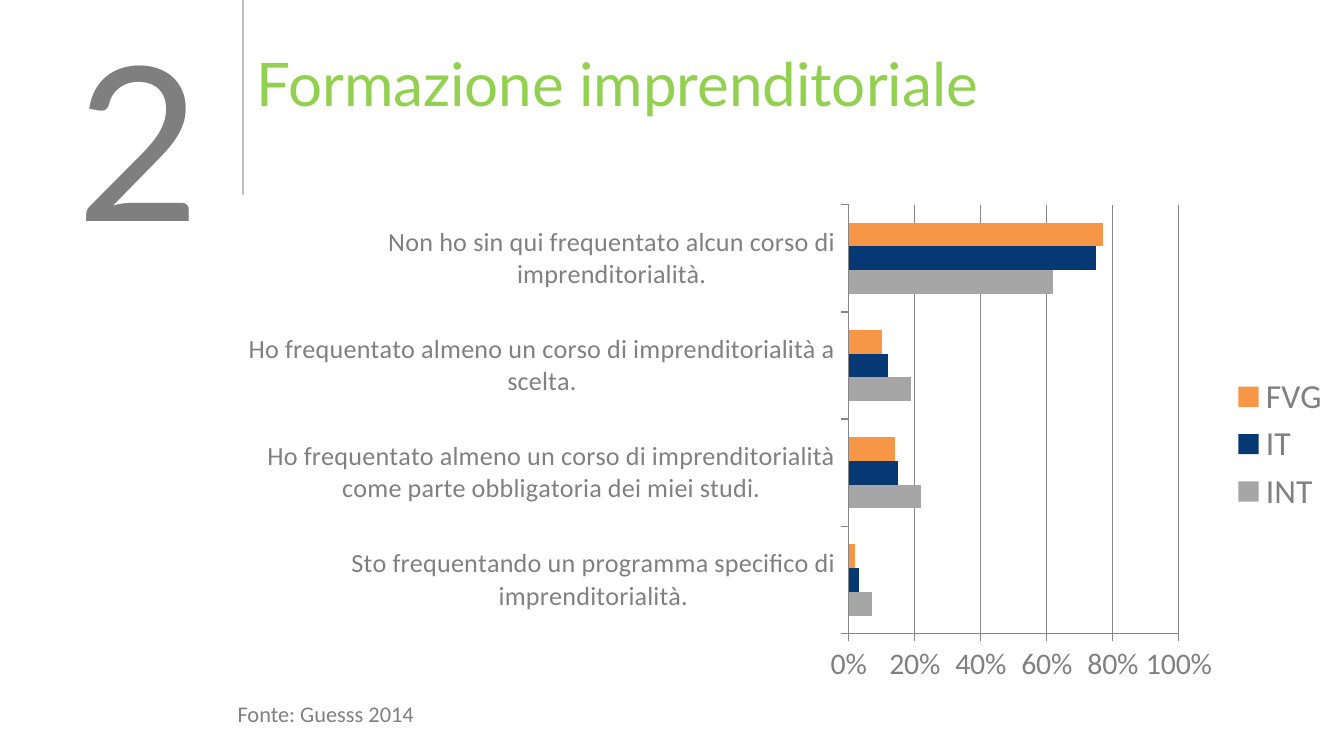
from dataclasses import dataclass

from lxml import etree
from pptx import Presentation
from pptx.chart.data import CategoryChartData
from pptx.dml.color import RGBColor
from pptx.enum import chart as charts, shapes, text
from pptx.oxml import parse_xml
from pptx.oxml.ns import nsdecls, qn
from pptx.util import Cm, Pt

COLORS = {
    "title": "92D050",
    "number": "7F7F7F",
    "text": "808080",
    "rule": "BFBFBF",
    "axis": "868686",
    "int": "A6A6A6",
    "it": "063873",
    "fvg": "F79646",
}


@dataclass(frozen=True)
class Box:
    left: float
    top: float
    width: float
    height: float

    def lengths(self) -> list:
        return [Cm(v) for v in (self.left, self.top, self.width, self.height)]


@dataclass(frozen=True)
class Series:
    name: str
    values: tuple
    color: str


CATEGORIES = [
    "Sto frequentando un programma specifico di imprenditorialità.",
    "Ho frequentato almeno un corso di imprenditorialità come parte obbligatoria dei miei studi.",
    "Ho frequentato almeno un corso di imprenditorialità a scelta.",
    "Non ho sin qui frequentato alcun corso di imprenditorialità.",
]
SERIES = [
    Series("INT", (0.07, 0.22, 0.19, 0.62), "int"),
    Series("IT", (0.03, 0.15, 0.12, 0.75), "it"),
    Series("FVG", (0.02, 0.14, 0.1, 0.77), "fvg"),
]
PLOT_LAYOUT = {"x": 0.55, "y": 0.02, "w": 0.3, "h": 0.86}


def rgb(name: str) -> RGBColor:
    return RGBColor.from_string(COLORS[name])


def style_font(font, size: float, color: str, name: str) -> None:
    font.size = Pt(size)
    font.name = name
    font.bold = False
    font.color.rgb = rgb(color)


def write_text(sp, content: str, *, size: float, color: str, font: str = "Lato",
               align=text.PP_ALIGN.LEFT, wrap: bool = True) -> None:
    tf = sp.text_frame
    tf.word_wrap = wrap
    tf.auto_size = text.MSO_AUTO_SIZE.NONE
    tf.vertical_anchor = text.MSO_ANCHOR.TOP
    p = tf.paragraphs[0]
    p.alignment = align
    r = p.add_run()
    r.text = content
    style_font(r.font, size, color, font)


def add_rule(slide, x: float, bottom: float) -> None:
    line = slide.shapes.add_connector(
        shapes.MSO_CONNECTOR.STRAIGHT, Cm(x), Cm(0), Cm(x), Cm(bottom))
    line.line.color.rgb = rgb("rule")
    line.line.width = Pt(1)
    etree.SubElement(line._element.spPr, qn("a:effectLst"))


def fix_plot_area(chart) -> None:
    """Pin the inner plot area so the long category labels get their room."""
    plot_area = chart._chartSpace.chart.plotArea
    for old in plot_area.findall(qn("c:layout")):
        plot_area.remove(old)
    sizes = "".join(f'<c:{k} val="{v}"/>' for k, v in PLOT_LAYOUT.items())
    plot_area.insert(0, parse_xml(
        f'<c:layout {nsdecls("c")}><c:manualLayout><c:layoutTarget val="inner"/>'
        f'<c:xMode val="edge"/><c:yMode val="edge"/>{sizes}'
        '</c:manualLayout></c:layout>'))


def add_training_chart(slide, box: Box) -> None:
    data = CategoryChartData(number_format="0%")
    data.categories = CATEGORIES
    for s in SERIES:
        data.add_series(s.name, s.values)
    chart = slide.shapes.add_chart(
        charts.XL_CHART_TYPE.BAR_CLUSTERED, *box.lengths(), data).chart
    chart.has_title = False
    style_font(chart.font, 18, "text", "Calibri")

    plot = chart.plots[0]
    plot.vary_by_categories = False
    plot.gap_width = 150
    plot.overlap = 0
    for series, s in zip(plot.series, SERIES):
        series.format.fill.solid()
        series.format.fill.fore_color.rgb = rgb(s.color)

    for axis, size in ((chart.category_axis, 14), (chart.value_axis, 16)):
        axis.major_tick_mark = charts.XL_TICK_MARK.OUTSIDE
        axis.format.line.color.rgb = rgb("axis")
        style_font(axis.tick_labels.font, size, "text", "Calibri")
    values = chart.value_axis
    values.minimum_scale, values.maximum_scale, values.major_unit = 0, 1, 0.2
    values.tick_labels.number_format = "0%"
    values.tick_labels.number_format_is_linked = False
    values.has_major_gridlines = True
    values.major_gridlines.format.line.color.rgb = rgb("axis")

    chart.has_legend = True
    chart.legend.position = charts.XL_LEGEND_POSITION.RIGHT
    chart.legend.include_in_layout = False
    style_font(chart.legend.font, 18, "text", "Calibri")
    fix_plot_area(chart)


def main() -> None:
    prs = Presentation()
    prs.slide_width, prs.slide_height = Cm(25.4), Cm(14.28)
    slide = prs.slides.add_slide(prs.slide_layouts[5])

    add_rule(slide, 4.6, 3.68)
    title = slide.shapes.title
    title.left, title.top, title.width, title.height = Box(4.6, 0.74, 19.96, 2.08).lengths()
    write_text(title, "Formazione imprenditoriale", size=32.2, color="title")

    number = slide.shapes.add_textbox(*Box(1.22, 0, 2.8, 5.18).lengths())
    write_text(number, "2", size=115, color="number",
               align=text.PP_ALIGN.CENTER, wrap=False)

    add_training_chart(slide, Box(4.6, 3.68, 20.8, 9.42))

    source = slide.shapes.add_textbox(*Box(4.24, 13.1, 5.92, 0.76).lengths())
    write_text(source, "Fonte: Guesss 2014", size=12, color="text", font="Calibri")
    prs.save("out.pptx")


if __name__ == "__main__":
    main()
